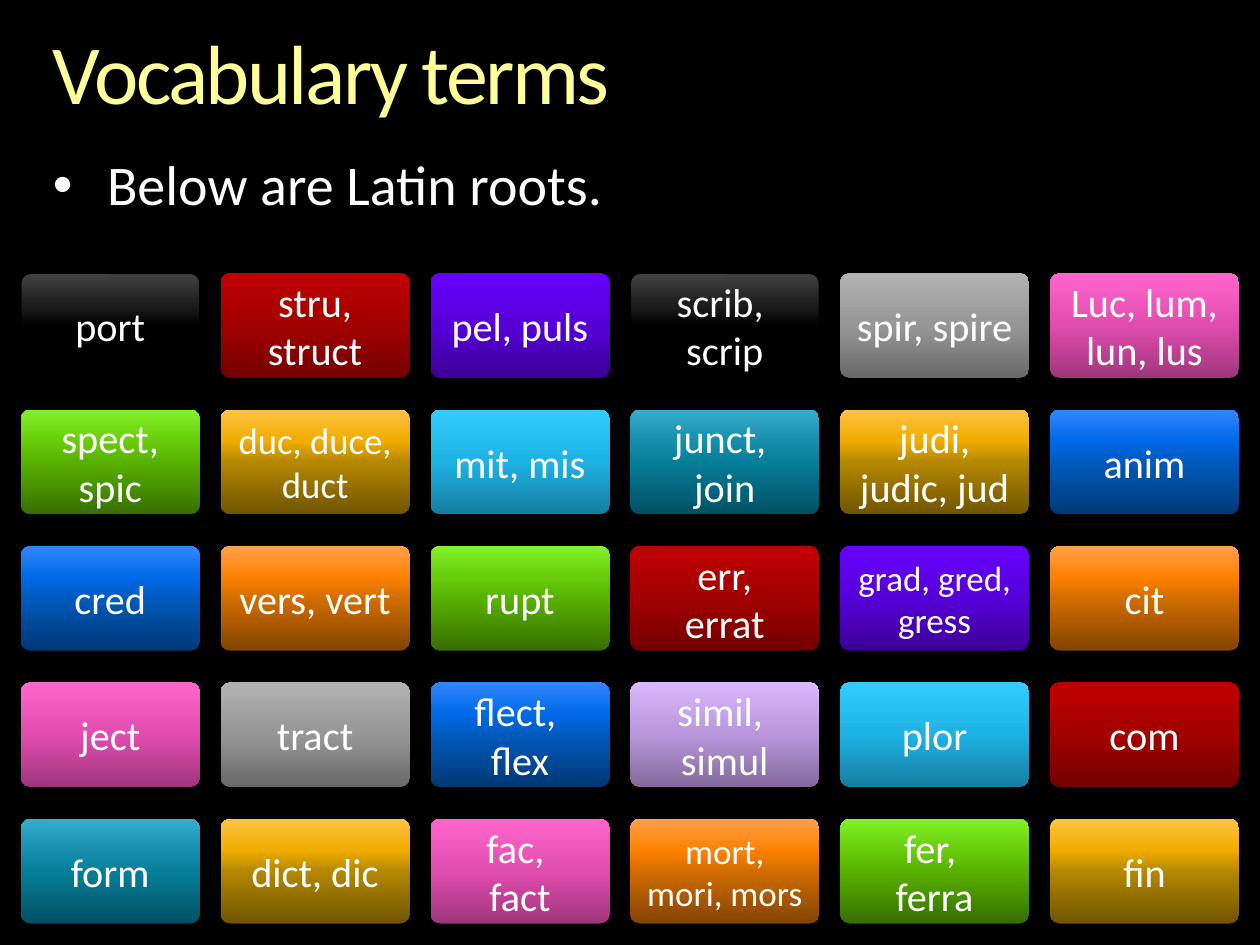
import pptx
import pptx.dml.color
import pptx.enum.shapes
import pptx.enum.text
import pptx.oxml
import pptx.oxml.ns
import pptx.util
from dataclasses import dataclass, field

Inches = pptx.util.Inches
Pt = pptx.util.Pt
Align = pptx.enum.text.PP_ALIGN
Anchor = pptx.enum.text.MSO_ANCHOR


@dataclass
class Theme:
    font: str = "Calibri"
    back: str = "000000"
    text: str = "FFFFFF"
    title: tuple = ((0, "FFFFB9"), (36, "FFFF99"), (86, "F6AE1E"))
    head: int = 48
    body: int = 32
    tile: int = 23
    fills: dict = field(default_factory=lambda: {
        "black": ((0, "000000"), (50, "000000"), (70, "1D1D1D"), (100, "424242")),
        "red": ((0, "720000"), (50, "A20000"), (100, "C00000")),
        "violet": ((0, "3C0097"), (50, "5600D7"), (100, "6600FF")),
        "gray": ((0, "696969"), (50, "969696"), (100, "B2B2B2")),
        "pink": ((0, "9E367B"), (50, "E14CAF"), (100, "FF66CC")),
        "green": ((0, "376E00"), (50, "58B100"), (70, "68CC0B"), (100, "83F229")),
        "gold": ((0, "705400"), (50, "B48800"), (70, "F0AC00"), (100, "FFC342")),
        "sky": ((0, "157DA0"), (50, "1EB2E4"), (100, "33CCFF")),
        "teal": ((0, "015062"), (50, "077E99"), (70, "178EAB"), (100, "35ADCE")),
        "blue": ((0, "003875"), (50, "005ABD"), (70, "0069E7"), (100, "3286FF")),
        "orange": ((0, "824400"), (50, "D16D00"), (70, "FE8100"), (100, "FFA04B")),
        "lilac": ((0, "82699A"), (50, "B996DB"), (100, "DBB7FF")),
    })


THEME = Theme()
WIDTHS = (1.42, 1.5, 1.42, 1.5, 1.5, 1.5)
TILE_H = 0.83
ROOTS = (
    (("port", "black"), ("stru, struct", "red"), ("pel, puls", "violet"),
     ("scrib, \nscrip", "black"), ("spir, spire", "gray"), ("Luc, lum, lun, lus", "pink")),
    (("spect, spic", "green"), ("duc, duce, duct", "gold", 21), ("mit, mis", "sky"),
     ("junct, \njoin", "teal"), ("judi, judic, jud", "gold"), ("anim", "blue")),
    (("cred", "blue"), ("vers, vert", "orange"), ("rupt", "green"),
     ("err,\nerrat", "red"), ("grad, gred, gress", "violet", 20), ("cit", "orange")),
    (("ject", "pink"), ("tract", "gray"), ("flect, \nflex", "blue"),
     ("simil, \nsimul", "lilac"), ("plor", "sky"), ("com", "red")),
    (("form", "teal"), ("dict, dic", "gold"), ("fac, \nfact", "pink"),
     ("mort, mori, mors", "orange", 20), ("fer, \nferra", "green"), ("fin", "gold")),
)


def color(code):
    return pptx.dml.color.RGBColor.from_string(code)


def node(tag, body="", **attrs):
    names = "".join(f' {key}="{value}"' for key, value in attrs.items())
    space = pptx.oxml.ns.nsdecls("a")
    return pptx.oxml.parse_xml(f"<a:{tag} {space}{names}>{body}</a:{tag}>")


def grade(fill, root, stops, angle):
    fill.gradient()
    fill.gradient_angle = angle
    items = root.find(".//" + pptx.oxml.ns.qn("a:gsLst"))
    items.clear()
    for place, code in stops:
        items.append(node("gs", f'<a:srgbClr val="{code}"/>', pos=place * 1000))


def write(frame, text, size, align=Align.LEFT, anchor=Anchor.TOP,
          inset=(0, 0), line=None, bullet=None, stops=None, track=None):
    frame.word_wrap = True
    frame.vertical_anchor = anchor
    frame.margin_left = frame.margin_right = Inches(inset[0])
    frame.margin_top = frame.margin_bottom = Inches(inset[1])
    for index, words in enumerate(text.split("\n")):
        para = frame.add_paragraph() if index else frame.paragraphs[0]
        para.alignment = align
        para.line_spacing = line
        if bullet:
            props = para._p.get_or_add_pPr()
            props.set("marL", str(Inches(0.43)))
            props.set("indent", str(-Inches(0.43)))
            props.append(node("buFont", typeface="Arial"))
            props.append(node("buChar", char=bullet))
        run = para.add_run()
        run.text = words
        run.font.name = THEME.font
        run.font.size = Pt(size)
        if stops:
            grade(run.font.fill, run._r, stops, 270)
        else:
            run.font.color.rgb = color(THEME.text)
        if track:
            run._r.get_or_add_rPr().set("spc", str(int(track * 100)))


def label(slide, box, text, size, **style):
    shape = slide.shapes.add_textbox(*map(Inches, box))
    write(shape.text_frame, text, size, line=0.9, **style)


def shade(shape, alpha, blur):
    shape.shadow.inherit = False
    tint = f'<a:srgbClr val="000000"><a:alpha val="{alpha * 1000}"/></a:srgbClr>'
    effect = shape._element.spPr.find(pptx.oxml.ns.qn("a:effectLst"))
    effect.append(node("outerShdw", tint, blurRad=Pt(blur), dist=Pt(3),
                       dir=90 * 60000, rotWithShape=0))


def tile(slide, box, text, hue, size=THEME.tile):
    kind = pptx.enum.shapes.MSO_SHAPE.ROUNDED_RECTANGLE
    shape = slide.shapes.add_shape(kind, *map(Inches, box))
    shape.adjustments[0] = 0.09
    grade(shape.fill, shape._element.spPr, THEME.fills[hue], 90)
    if hue == "black":
        shape.line.color.rgb = color(THEME.back)
        shape.line.width = Pt(0.75)
        shade(shape, 35, 4)
    else:
        shape.line.fill.background()
        shade(shape, 45, 5)
    write(shape.text_frame, text, size, align=Align.CENTER,
          anchor=Anchor.MIDDLE, inset=(0.1, 0.05))


def grid(slide, box):
    left, top, width, height = box
    gap = (width - sum(WIDTHS)) / (len(WIDTHS) + 1)
    step = (height - TILE_H) / (len(ROOTS) - 1)
    for row, roots in enumerate(ROOTS):
        x = left + gap
        for wide, root in zip(WIDTHS, roots):
            tile(slide, (x, top + row * step, wide, TILE_H), *root)
            x += wide + gap


def main():
    deck = pptx.Presentation()
    deck.slide_width, deck.slide_height = Inches(10), Inches(7.5)
    slide = deck.slides.add_slide(deck.slide_layouts[6])
    slide.background.fill.solid()
    slide.background.fill.fore_color.rgb = color(THEME.back)
    label(slide, (0.42, 0.25, 9.17, 0.73), "Vocabulary terms", THEME.head,
          stops=THEME.title, track=-1.5)
    label(slide, (0.42, 1.25, 9.17, 0.83), "Below are Latin roots.", THEME.body,
          bullet="•")
    grid(slide, (0, 2.17, 10, 5.16))
    deck.save("out.pptx")


if __name__ == "__main__":
    main()
